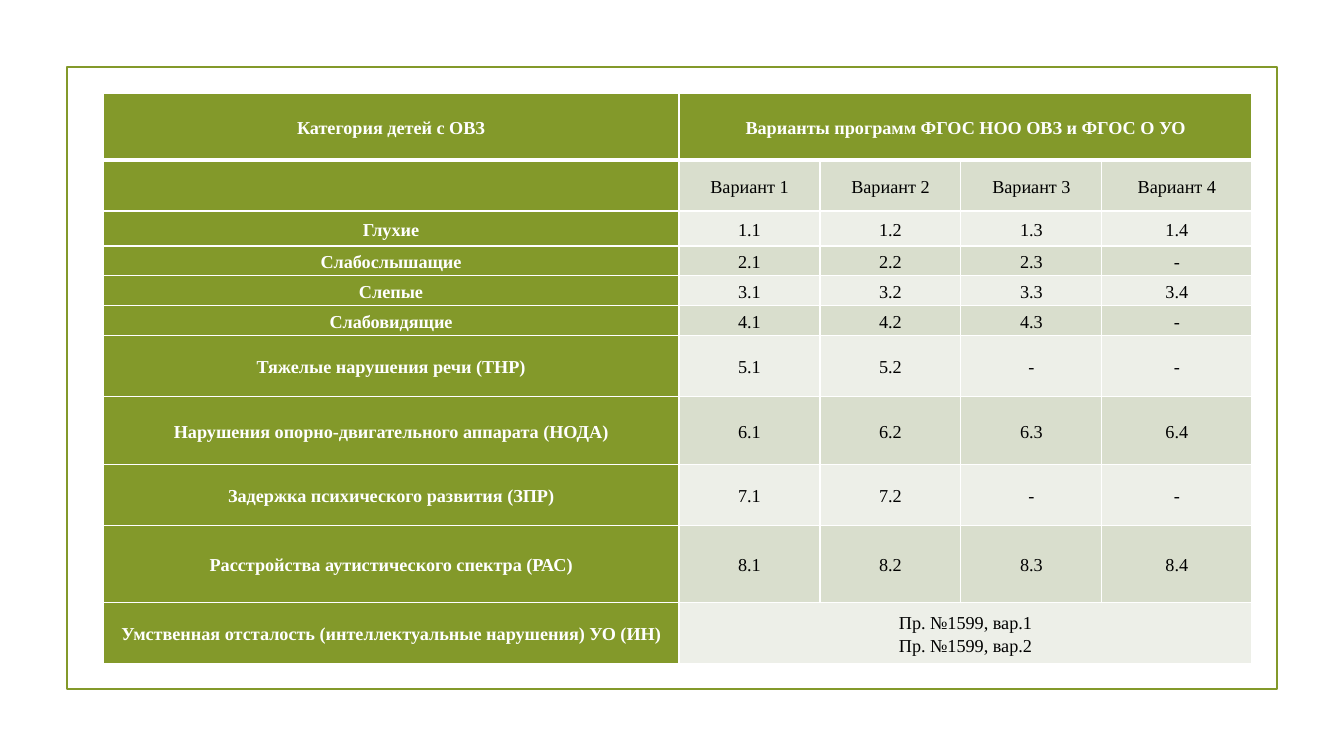
from lxml import etree
from pptx import Presentation
from pptx.dml.color import RGBColor
from pptx.enum.shapes import MSO_SHAPE
from pptx.enum.text import MSO_ANCHOR, PP_ALIGN
from pptx.oxml.ns import qn
from pptx.util import Emu, Pt

RECTANGLE = MSO_SHAPE.RECTANGLE
MIDDLE = MSO_ANCHOR.MIDDLE
CENTER = PP_ALIGN.CENTER

# Content: row height in px, category, variants (a single variant spans all columns)
ROWS = [
    (67, "Категория детей с ОВЗ", ["Варианты программ ФГОС НОО ОВЗ и ФГОС О УО"]),
    (51, "", ["Вариант 1", "Вариант 2", "Вариант 3", "Вариант 4"]),
    (35, "Глухие", ["1.1", "1.2", "1.3", "1.4"]),
    (30, "Слабослышащие", ["2.1", "2.2", "2.3", "-"]),
    (30, "Слепые", ["3.1", "3.2", "3.3", "3.4"]),
    (30, "Слабовидящие", ["4.1", "4.2", "4.3", "-"]),
    (61, "Тяжелые нарушения речи (ТНР)", ["5.1", "5.2", "-", "-"]),
    (68, "Нарушения опорно-двигательного аппарата (НОДА)", ["6.1", "6.2", "6.3", "6.4"]),
    (61, "Задержка психического развития (ЗПР)", ["7.1", "7.2", "-", "-"]),
    (77, "Расстройства аутистического спектра (РАС)", ["8.1", "8.2", "8.3", "8.4"]),
    (61, "Умственная отсталость (интеллектуальные нарушения) УО (ИН)",
     ["Пр. №1599, вар.1\nПр. №1599, вар.2"]),
]
COLUMN_WIDTHS = [576, 141, 141, 141, 150]
TABLE_LEFT, TABLE_TOP = 103, 93
FRAME = (67, 67, 1210, 622)

GREEN, WHITE, BLACK = "83992A", "FFFFFF", "000000"
BANDS = ["EDEFE8", "D9DECD"]
FONT = "Times New Roman"


def px(length):
    return Emu(round(length * 914400 / 100.8))


def color(hex_string):
    return RGBColor.from_string(hex_string)


def add_borders(cell, widths):
    properties = cell._tc.get_or_add_tcPr()
    for side, width in widths.items():
        line = etree.SubElement(properties, qn(f"a:ln{side}"), w=str(Pt(width)))
        fill = etree.SubElement(line, qn("a:solidFill"))
        etree.SubElement(fill, qn("a:srgbClr"), val=WHITE)


def style_cell(cell, text, background, is_heading):
    cell.fill.solid()
    cell.fill.fore_color.rgb = color(background)
    cell.vertical_anchor = MIDDLE
    cell.margin_left = cell.margin_right = cell.margin_top = cell.margin_bottom = 0
    cell.text = text
    for paragraph in cell.text_frame.paragraphs:
        paragraph.alignment = CENTER
        paragraph.line_spacing = 1.15
        font = paragraph.font
        font.name, font.size, font.bold = FONT, Pt(13), is_heading
        font.color.rgb = color(WHITE if is_heading else BLACK)


presentation = Presentation()
presentation.slide_width, presentation.slide_height = px(1344), px(756)
slide = presentation.slides.add_slide(presentation.slide_layouts[6])

# Green frame
frame = slide.shapes.add_shape(RECTANGLE, *map(px, FRAME))
frame.shadow.inherit = False
frame.fill.background()
frame.line.color.rgb = color(GREEN)
frame.line.width = Pt(1.25)

# Table grid
heights = [height for height, _, _ in ROWS]
table = slide.shapes.add_table(
    len(ROWS), len(COLUMN_WIDTHS), px(TABLE_LEFT), px(TABLE_TOP),
    px(sum(COLUMN_WIDTHS)), px(sum(heights))).table
for column, width in zip(table.columns, COLUMN_WIDTHS):
    column.width = px(width)
for row, height in zip(table.rows, heights):
    row.height = px(height)

# Cells: green headings, alternating bands for the variants
last_column = len(COLUMN_WIDTHS) - 1
for row_index, (_, category, variants) in enumerate(ROWS):
    widths = {"L": 1, "R": 1, "T": 3 if row_index == 1 else 1, "B": 3 if row_index == 0 else 1}
    for column_index in range(len(COLUMN_WIDTHS)):
        add_borders(table.cell(row_index, column_index), widths)
    if len(variants) == 1:
        table.cell(row_index, 1).merge(table.cell(row_index, last_column))
    for column_index, text in enumerate([category, *variants]):
        is_heading = row_index == 0 or column_index == 0
        background = GREEN if is_heading else BANDS[row_index % 2]
        style_cell(table.cell(row_index, column_index), text, background, is_heading)

presentation.save("out.pptx")
